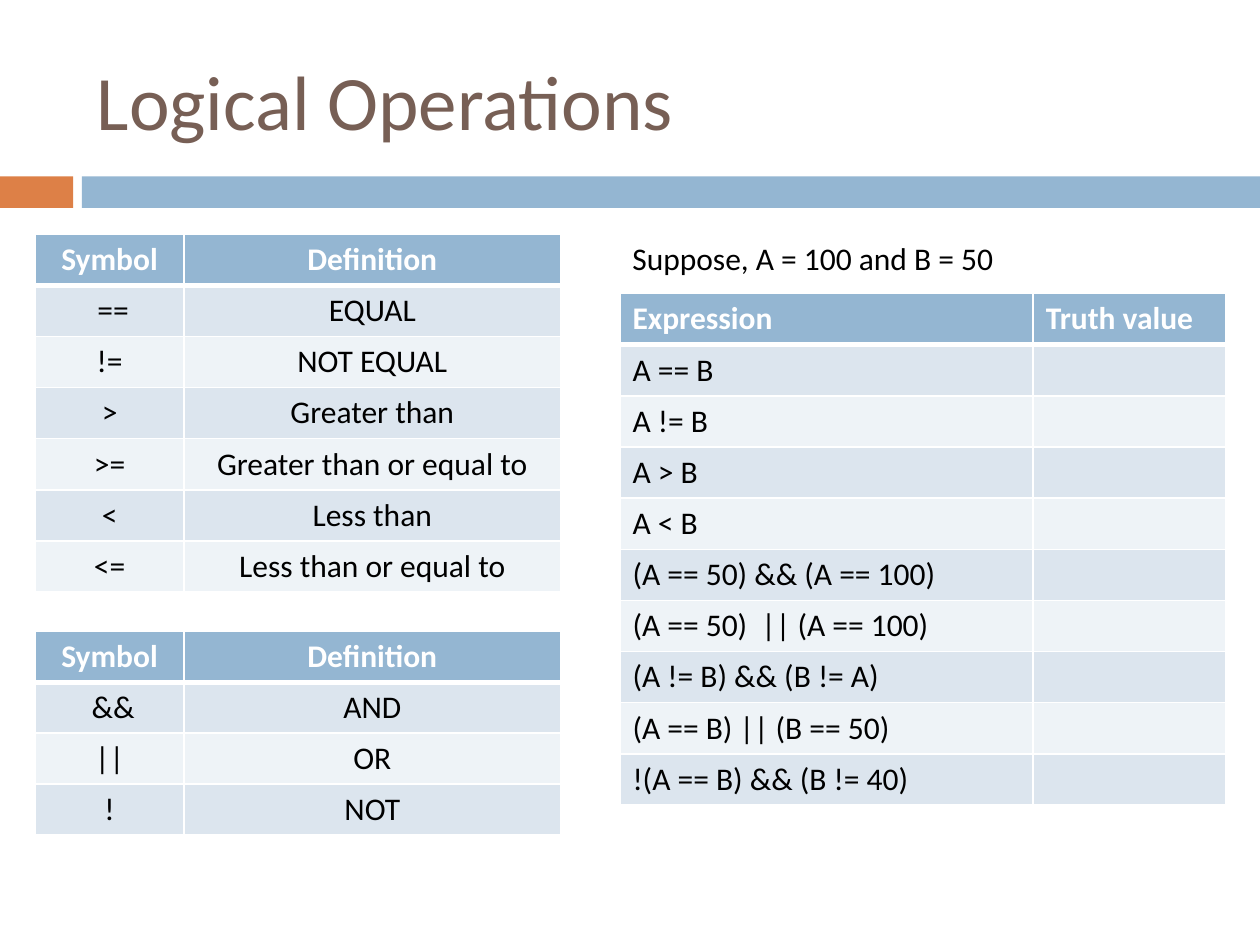
from dataclasses import dataclass

from lxml import etree
from pptx import Presentation
from pptx import util as u
from pptx.dml.color import RGBColor
from pptx.enum import shapes, text
from pptx.oxml import ns


@dataclass(frozen=True)
class Theme:
    """Hold the colours, font and type sizes of the slide."""

    font: str = "Calibri"
    title_size: int = 44
    body_size: int = 18
    title: str = "775F55"
    body: str = "000000"
    white: str = "FFFFFF"
    accent: str = "DD8047"
    header: str = "94B6D2"
    bands: tuple = ("DCE5EE", "EEF3F7")
    thin: int = 1
    thick: int = 3


THEME = Theme()

COMPARISONS = [
    ("Symbol", "Definition"),
    (" ==", "EQUAL"),
    ("!=", "NOT EQUAL"),
    (">", "Greater than"),
    (">=", "Greater than or equal to"),
    ("<", "Less than"),
    ("<=", "Less than or equal to"),
]
CONNECTIVES = [
    ("Symbol", "Definition"),
    (" &&", "AND"),
    ("||", "OR"),
    ("!", "NOT"),
]
EXPRESSIONS = [
    ("Expression", "Truth value"),
    ("A == B", ""),
    ("A != B", ""),
    ("A > B", ""),
    ("A < B", ""),
    ("(A == 50) && (A == 100)", ""),
    ("(A == 50)  || (A == 100)", ""),
    ("(A != B) && (B != A)", ""),
    ("(A == B) || (B == 50)", ""),
    ("!(A == B) && (B != 40)", ""),
]
SYMBOL_COLUMNS = (1.18, 2.99)
EXPRESSION_COLUMNS = (3.28, 1.53)


def write_text(frame, content, *, size=THEME.body_size, color=THEME.body,
               bold=False, align=text.PP_ALIGN.LEFT):
    """Write one formatted paragraph into a text frame."""
    paragraph = frame.paragraphs[0]
    paragraph.alignment = align
    if not content:
        paragraph.font.size = u.Pt(size)
        return
    run = paragraph.add_run()
    run.text = content
    run.font.name = THEME.font
    run.font.size = u.Pt(size)
    run.font.bold = bold
    run.font.color.rgb = RGBColor.from_string(color)


def add_bar(slide, left, width, color):
    """Add one plain segment of the bar below the title."""
    shape = slide.shapes.add_shape(
        shapes.MSO_SHAPE.RECTANGLE,
        u.Inches(left), u.Inches(1.4), u.Inches(width), u.Inches(0.25))
    shape.shadow.inherit = False
    shape.fill.solid()
    shape.fill.fore_color.rgb = RGBColor.from_string(color)
    shape.line.fill.background()


def add_label(slide, box, content, *, wrap=True, **text_format):
    """Add a text box with vertically centred text."""
    shape = slide.shapes.add_textbox(*map(u.Inches, box))
    frame = shape.text_frame
    frame.word_wrap = wrap
    frame.vertical_anchor = text.MSO_ANCHOR.MIDDLE
    write_text(frame, content, **text_format)


def set_borders(cell, top, bottom):
    """Give a cell white borders with the given top and bottom widths."""
    properties = cell._tc.get_or_add_tcPr()
    widths = {"L": THEME.thin, "R": THEME.thin, "T": top, "B": bottom}
    for side, width in widths.items():
        line = etree.SubElement(properties, ns.qn(f"a:ln{side}"), w=str(u.Pt(width)))
        fill = etree.SubElement(line, ns.qn("a:solidFill"))
        etree.SubElement(fill, ns.qn("a:srgbClr"), val=THEME.white)


def add_banded_table(slide, left, top, height, columns, rows, align):
    """Add a table with a header row and alternating row colours."""
    shape = slide.shapes.add_table(
        len(rows), len(columns), u.Inches(left), u.Inches(top),
        u.Inches(sum(columns)), u.Inches(height))
    table = shape.table
    for column, width in zip(table.columns, columns):
        column.width = u.Inches(width)
    for index, row in enumerate(rows):
        is_header = index == 0
        fill = THEME.header if is_header else THEME.bands[(index - 1) % 2]
        upper = THEME.thick if index == 1 else THEME.thin
        lower = THEME.thick if is_header else THEME.thin
        for cell, content in zip(table.rows[index].cells, row):
            set_borders(cell, upper, lower)
            cell.fill.solid()
            cell.fill.fore_color.rgb = RGBColor.from_string(fill)
            write_text(cell.text_frame, content, bold=is_header, align=align,
                       color=THEME.white if is_header else THEME.body)


def main():
    """Build and save the slide."""
    presentation = Presentation()
    presentation.slide_width = u.Inches(10)
    presentation.slide_height = u.Inches(7.5)
    slide = presentation.slides.add_slide(presentation.slide_layouts[6])

    add_bar(slide, 0, 0.58, THEME.accent)
    add_bar(slide, 0.65, 9.35, THEME.header)
    add_label(slide, (0.67, 0.25, 8.92, 1.08), "Logical Operations",
              size=THEME.title_size, color=THEME.title)

    center, left = text.PP_ALIGN.CENTER, text.PP_ALIGN.LEFT
    add_banded_table(slide, 0.28, 1.86, 2.84, SYMBOL_COLUMNS, COMPARISONS, center)
    add_banded_table(slide, 0.28, 5.01, 1.62, SYMBOL_COLUMNS, CONNECTIVES, center)
    add_banded_table(slide, 4.92, 2.33, 4.06, EXPRESSION_COLUMNS, EXPRESSIONS, left)
    add_label(slide, (4.92, 1.85, 3.28, 0.4), "Suppose, A = 100 and B = 50", wrap=False)

    presentation.save("out.pptx")


if __name__ == "__main__":
    main()
